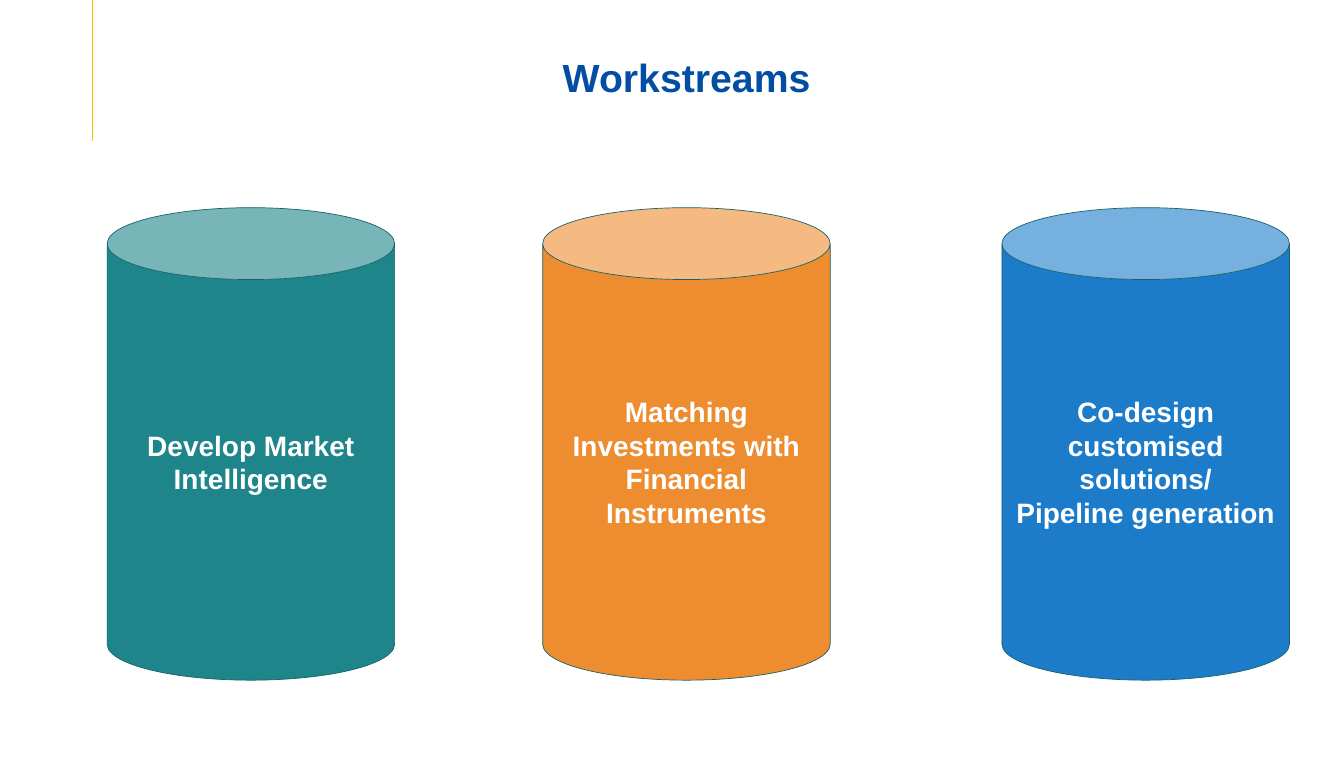
from lxml.etree import SubElement
from pptx import Presentation
from pptx.dml.color import RGBColor
from pptx.enum.shapes import MSO_CONNECTOR, MSO_SHAPE
from pptx.enum.text import MSO_ANCHOR, MSO_AUTO_SIZE, PP_ALIGN
from pptx.oxml.ns import qn
from pptx.util import Pt

PX = 9144
NAVY = RGBColor(0x03, 0x4E, 0xA2)
GOLD = RGBColor(0xFF, 0xC0, 0x00)
TEAL = RGBColor(0x1E, 0x85, 0x8B)
DARK_TEAL = RGBColor(0x16, 0x62, 0x67)
ORANGE = RGBColor(0xED, 0x8D, 0x2F)
BLUE = RGBColor(0x1C, 0x7C, 0xCA)
WHITE = RGBColor(0xFF, 0xFF, 0xFF)

WORKSTREAMS = [
    (212, TEAL, "Develop Market Intelligence"),
    (1074, ORANGE, "Matching Investments with Financial Instruments"),
    (1983, BLUE, "Co-design customised solutions/\nPipeline generation"),
]


def format_text(frame, size, color):
    for paragraph in frame.paragraphs:
        paragraph.alignment = PP_ALIGN.CENTER
        for run in paragraph.runs:
            run.font.name = "Arial"
            run.font.size = Pt(size)
            run.font.bold = True
            run.font.color.rgb = color


deck = Presentation()
deck.slide_width = 2660 * PX
deck.slide_height = 1500 * PX
slide = deck.slides.add_slide(deck.slide_layouts[5])

accent = slide.shapes.add_connector(MSO_CONNECTOR.STRAIGHT, 183 * PX, 0, 183 * PX, 279 * PX)
accent.line.color.rgb = GOLD
accent.line.width = Pt(2.25)
SubElement(accent._element.spPr, qn("a:effectLst"))

heading = slide.shapes.title
heading.left, heading.top = 212 * PX, 107 * PX
heading.width, heading.height = 2294 * PX, 93 * PX
frame = heading.text_frame
frame.text = "Workstreams"
frame.auto_size = MSO_AUTO_SIZE.NONE
frame.vertical_anchor = MSO_ANCHOR.BOTTOM
frame.margin_left = frame.margin_right = 10 * PX
frame.margin_top, frame.margin_bottom = 5 * PX, 0
frame.paragraphs[0].line_spacing = 0.9
format_text(frame, 55.9, NAVY)

for left, color, label in WORKSTREAMS:
    pillar = slide.shapes.add_shape(MSO_SHAPE.CAN, left * PX, 411 * PX, 569 * PX, 935 * PX)
    pillar.shadow.inherit = False
    pillar.fill.solid()
    pillar.fill.fore_color.rgb = color
    pillar.line.color.rgb = DARK_TEAL
    pillar.line.width = Pt(1)
    pillar.text_frame.text = label
    pillar.text_frame.word_wrap = True
    pillar.text_frame.vertical_anchor = MSO_ANCHOR.MIDDLE
    format_text(pillar.text_frame, 39.9, WHITE)

deck.save("out.pptx")
